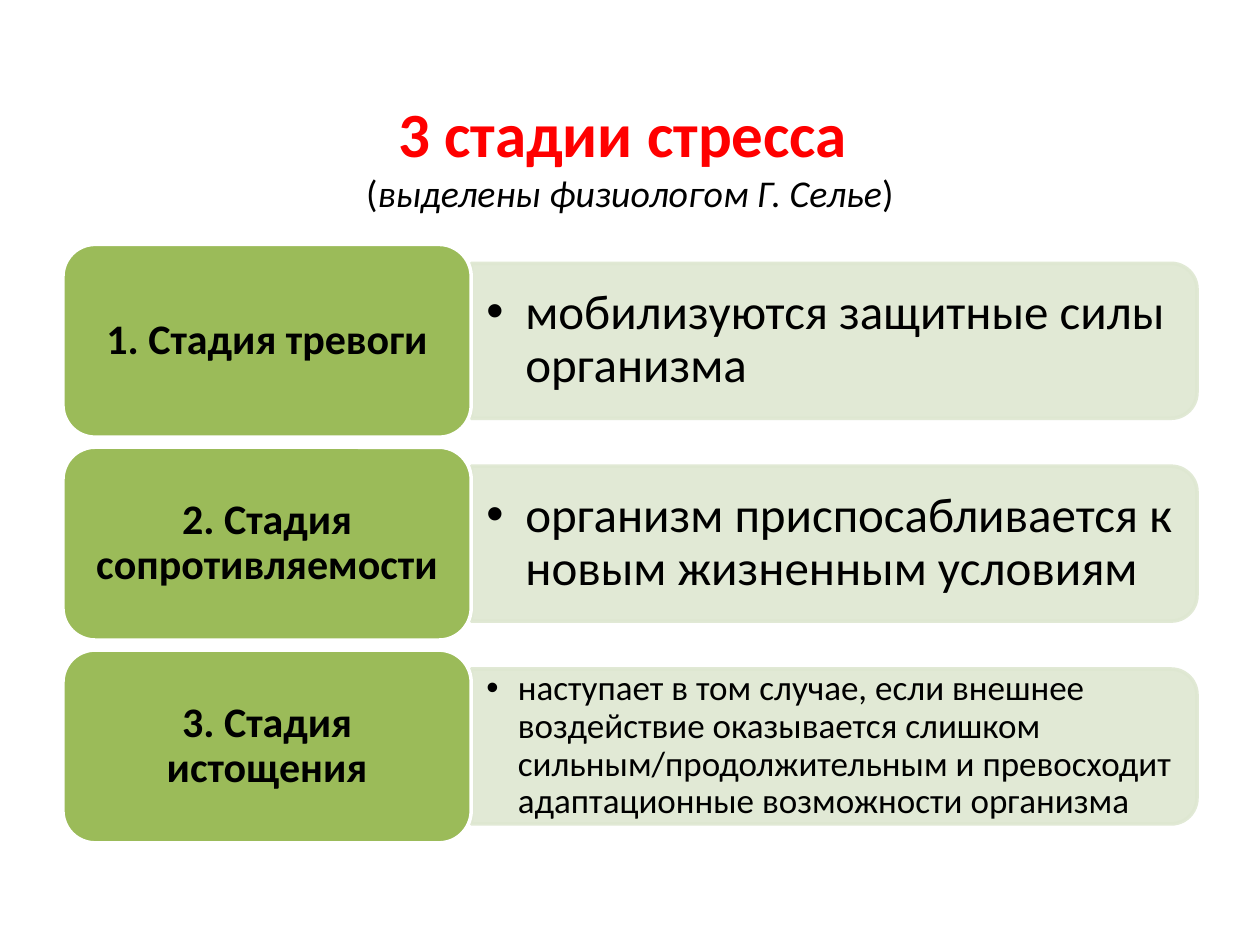
"""Build a slide on the three stages of stress."""
from lxml import etree
from pptx import Presentation
from pptx import util as u
from pptx.dml.color import RGBColor
from pptx.enum import shapes, text
from pptx.oxml import ns

BLACK = RGBColor(0x00, 0x00, 0x00)
WHITE = RGBColor(0xFF, 0xFF, 0xFF)
RED = RGBColor(0xFF, 0x00, 0x00)
GREEN = RGBColor(0x9B, 0xBB, 0x59)
PALE_GREEN = RGBColor(0xDE, 0xE7, 0xD1)

MARGIN, CONTENT_WIDTH = 0.5, 9
LABEL_WIDTH, LABEL_HEIGHT = 0.36 * CONTENT_WIDTH, 1.53
PANEL_WIDTH, PANEL_HEIGHT = 0.64 * CONTENT_WIDTH, 1.23
PANEL_LEFT = MARGIN + LABEL_WIDTH
FIRST_ROW, ROW_PITCH = 1.94, 1.61

STAGES = [
    ("1. Стадия тревоги", "мобилизуются защитные силы организма", 28, 0.31),
    ("2. Стадия сопротивляемости",
     "организм приспосабливается к новым жизненным условиям", 28, 0.31),
    ("3. Стадия истощения",
     "наступает в том случае, если внешнее воздействие оказывается слишком "
     "сильным/продолжительным и превосходит адаптационные возможности организма",
     20, 0.25),
]


def style_font(font, size, color, bold=False, italic=False):
    font.name, font.size = "Calibri", u.Pt(size)
    font.bold, font.italic = bold, italic
    font.color.rgb = color


def style_shape(shape, fill, line):
    shape.shadow.inherit = False
    shape.fill.solid()
    shape.fill.fore_color.rgb = fill
    shape.line.color.rgb = line
    shape.line.width = u.Pt(2)


presentation = Presentation()
presentation.slide_width, presentation.slide_height = u.Inches(10), u.Inches(7.5)
slide = presentation.slides.add_slide(presentation.slide_layouts[6])

title = slide.shapes.add_textbox(
    u.Inches(MARGIN), u.Inches(0.76), u.Inches(CONTENT_WIDTH), u.Inches(0.94))
title.text_frame.word_wrap = True
title.text_frame.vertical_anchor = text.MSO_ANCHOR.MIDDLE
paragraph = title.text_frame.paragraphs[0]
paragraph.alignment = text.PP_ALIGN.CENTER
paragraph.text = "3 стадии стресса \v"
style_font(paragraph.runs[0].font, 36, RED, bold=True)
for words, italic in (("(", False), ("выделены физиологом Г. Селье", True), (")", False)):
    run = paragraph.add_run()
    run.text = words
    style_font(run.font, 21.6, BLACK, italic=italic)

for row, (name, description, size, indent) in enumerate(STAGES):
    top = FIRST_ROW + row * ROW_PITCH
    middle = top + LABEL_HEIGHT / 2

    panel = slide.shapes.add_shape(
        shapes.MSO_SHAPE.ROUND_2_SAME_RECTANGLE,
        u.Inches(PANEL_LEFT + (PANEL_WIDTH - PANEL_HEIGHT) / 2),
        u.Inches(middle - PANEL_WIDTH / 2),
        u.Inches(PANEL_HEIGHT), u.Inches(PANEL_WIDTH))
    panel.rotation = 90
    style_shape(panel, PALE_GREEN, PALE_GREEN)
    for color in panel._element.spPr.iter(ns.qn("a:srgbClr")):
        etree.SubElement(color, ns.qn("a:alpha"), val="90000")

    details = slide.shapes.add_textbox(
        u.Inches(PANEL_LEFT), u.Inches(middle - 0.56), u.Inches(5.7), u.Inches(1.11))
    frame = details.text_frame
    frame.word_wrap = True
    frame.vertical_anchor = text.MSO_ANCHOR.MIDDLE
    frame.margin_left = frame.margin_right = u.Inches(0.12)
    frame.margin_top = frame.margin_bottom = u.Inches(0.06)
    frame.text = description
    paragraph = frame.paragraphs[0]
    paragraph.level = 1
    paragraph.line_spacing = 0.9
    properties = paragraph._p.get_or_add_pPr()
    properties.set("marL", str(u.Inches(indent)))
    properties.set("indent", str(-u.Inches(indent)))
    etree.SubElement(properties, ns.qn("a:buFont"), typeface="Arial")
    etree.SubElement(properties, ns.qn("a:buChar"), char="•")
    style_font(paragraph.runs[0].font, size, BLACK)

    label = slide.shapes.add_shape(
        shapes.MSO_SHAPE.ROUNDED_RECTANGLE, u.Inches(MARGIN), u.Inches(top),
        u.Inches(LABEL_WIDTH), u.Inches(LABEL_HEIGHT))
    style_shape(label, GREEN, WHITE)
    label.text_frame.word_wrap = True
    label.text_frame.vertical_anchor = text.MSO_ANCHOR.MIDDLE
    label.text_frame.text = name
    paragraph = label.text_frame.paragraphs[0]
    paragraph.alignment = text.PP_ALIGN.CENTER
    paragraph.line_spacing = 0.9
    style_font(paragraph.runs[0].font, 24, BLACK, bold=True)

presentation.save("out.pptx")
